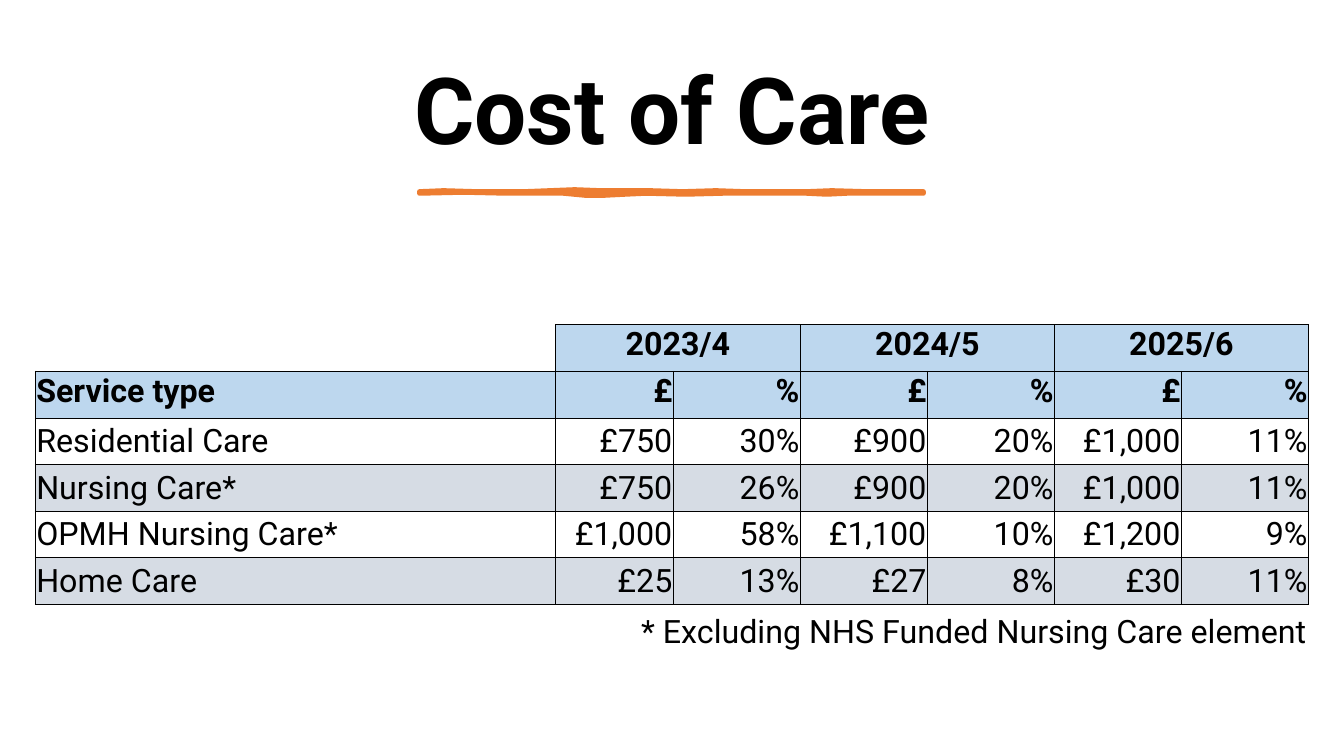
from lxml import etree
from pptx import Presentation
from pptx.dml.color import RGBColor
from pptx.enum import text as t
from pptx.oxml import ns
from pptx.util import Inches, Pt

BLACK = RGBColor(0x00, 0x00, 0x00)
ORANGE = RGBColor(0xED, 0x7D, 0x31)
BLUE = RGBColor(0xBD, 0xD7, 0xEE)
GREY = RGBColor(0xD6, 0xDC, 0xE4)
LEFT, MID, RIGHT = t.PP_ALIGN.LEFT, t.PP_ALIGN.CENTER, t.PP_ALIGN.RIGHT
TOP, CENTRE, BASE = t.MSO_ANCHOR.TOP, t.MSO_ANCHOR.MIDDLE, t.MSO_ANCHOR.BOTTOM


def style(para, size, bold, align):
    para.alignment = align
    para.font.color.rgb = BLACK
    for key, val in {"name": "Roboto", "size": Pt(size), "bold": bold}.items():
        setattr(para.font, key, val)


def edge(cell, sides):
    """Draw the listed sides of a cell in black and clear the others."""
    props = cell._tc.get_or_add_tcPr()
    for side in "LRTB":
        line = etree.SubElement(props, ns.qn("a:ln" + side), w=str(Pt(0.5)))
        if side in sides:
            fill = etree.SubElement(line, ns.qn("a:solidFill"))
            etree.SubElement(fill, ns.qn("a:srgbClr"), val=str(BLACK))
        else:
            etree.SubElement(line, ns.qn("a:noFill"))


deck = Presentation()
deck.slide_width, deck.slide_height = Inches(13.33), Inches(7.5)
slide = deck.slides.add_slide(deck.slide_layouts[5])

# Title
title = slide.shapes.title
place = {"left": 0.7, "top": 0.45, "width": 11.93, "height": 1.37}
for key, val in place.items():
    setattr(title, key, Inches(val))
frame = title.text_frame
frame.text = "Cost of Care"
for key, val in {"word_wrap": True, "auto_size": t.MSO_AUTO_SIZE.NONE,
                 "vertical_anchor": CENTRE}.items():
    setattr(frame, key, val)
head = frame.paragraphs[0]
style(head, 66, True, MID)
head.line_spacing, head.space_after = 0.9, Pt(6)

# Hand-drawn underline in hundredths of an inch: upper edge, then lower edge back
upper = [(416, 190), (440, 189), (473, 190), (520, 190), (545, 189),
         (570, 188), (596, 189), (620, 189), (645, 189), (677, 190),
         (710, 189), (739, 190), (770, 190), (800, 190), (825, 189),
         (860, 190), (916, 190)]
lower = [(916, 192), (880, 192), (840, 192), (820, 193), (800, 192),
         (760, 192), (717, 192), (680, 193), (641, 192), (620, 193),
         (600, 194), (580, 194), (559, 192), (503, 192), (460, 191),
         (416, 192)]
pen = slide.shapes.build_freeform(*upper[0], scale=Inches(0.01))
pen.add_line_segments(upper[1:] + lower, close=True)
stroke = pen.convert_to_shape()
stroke.shadow.inherit = False
stroke.fill.solid()
stroke.fill.fore_color.rgb = ORANGE
stroke.line.color.rgb = ORANGE
stroke.line.width = Pt(3.25)

# Cost table
rows = [
    ["", "2023/4", "", "2024/5", "", "2025/6", ""],
    ["Service type"] + ["£", "%"] * 3,
    ["Residential Care", "£750", "30%", "£900", "20%", "£1,000", "11%"],
    ["Nursing Care*", "£750", "26%", "£900", "20%", "£1,000", "11%"],
    ["OPMH Nursing Care*", "£1,000", "58%", "£1,100", "10%", "£1,200", "9%"],
    ["Home Care", "£25", "13%", "£27", "8%", "£30", "11%"],
    ["* Excluding NHS Funded Nursing Care element"] + [""] * 6,
]
fills = [BLUE, BLUE, None, GREY, None, GREY, None]
wide = [5.16, 1.17] + [1.26] * 5
last = len(rows) - 1
table = slide.shapes.add_table(len(rows), len(wide), Inches(0.35), Inches(3.22),
                               Inches(12.63), Inches(3.24)).table
table.first_row = table.horz_banding = False
for col, width in zip(table.columns, wide):
    col.width = Inches(width)

for r, row in enumerate(rows):
    for c, word in enumerate(row):
        cell = table.cell(r, c)
        corner = r == c == 0
        edge(cell, "RB" if corner else "T" if r == last else "LRTB")
        if fills[r] is None or corner:
            cell.fill.background()
        else:
            cell.fill.solid()
            cell.fill.fore_color.rgb = fills[r]
        for key, val in {"margin_left": 0.01, "margin_right": 0.01,
                         "margin_top": 0.01, "margin_bottom": 0}.items():
            setattr(cell, key, Inches(val))
        cell.vertical_anchor = TOP if r < 2 else BASE if r == last else CENTRE
        cell.text = word
        align = MID if r == 0 else LEFT if c == 0 and r < last else RIGHT
        style(cell.text_frame.paragraphs[0], 23, r < 2, align)

# Year headings span two columns, the footnote spans all
for c in (1, 3, 5):
    table.cell(0, c).merge(table.cell(0, c + 1))
table.cell(last, 0).merge(table.cell(last, len(wide) - 1))

deck.save("out.pptx")
